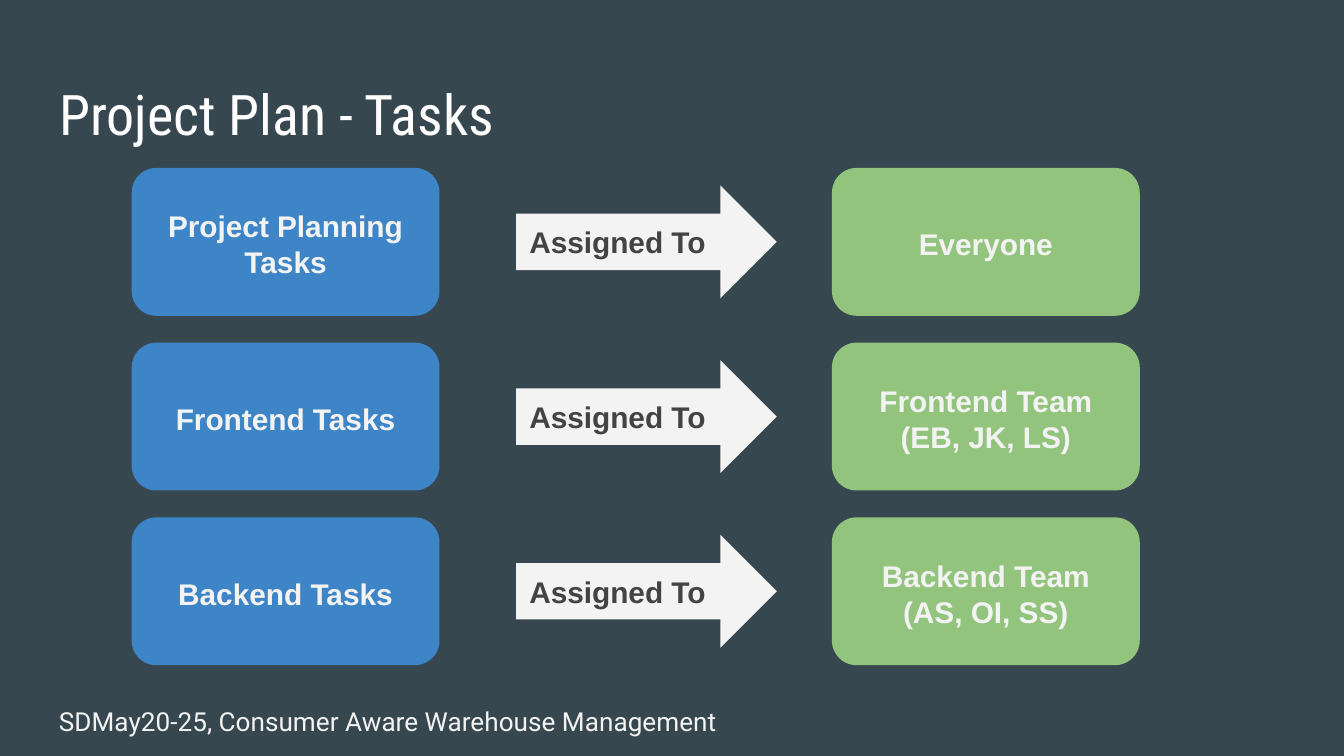
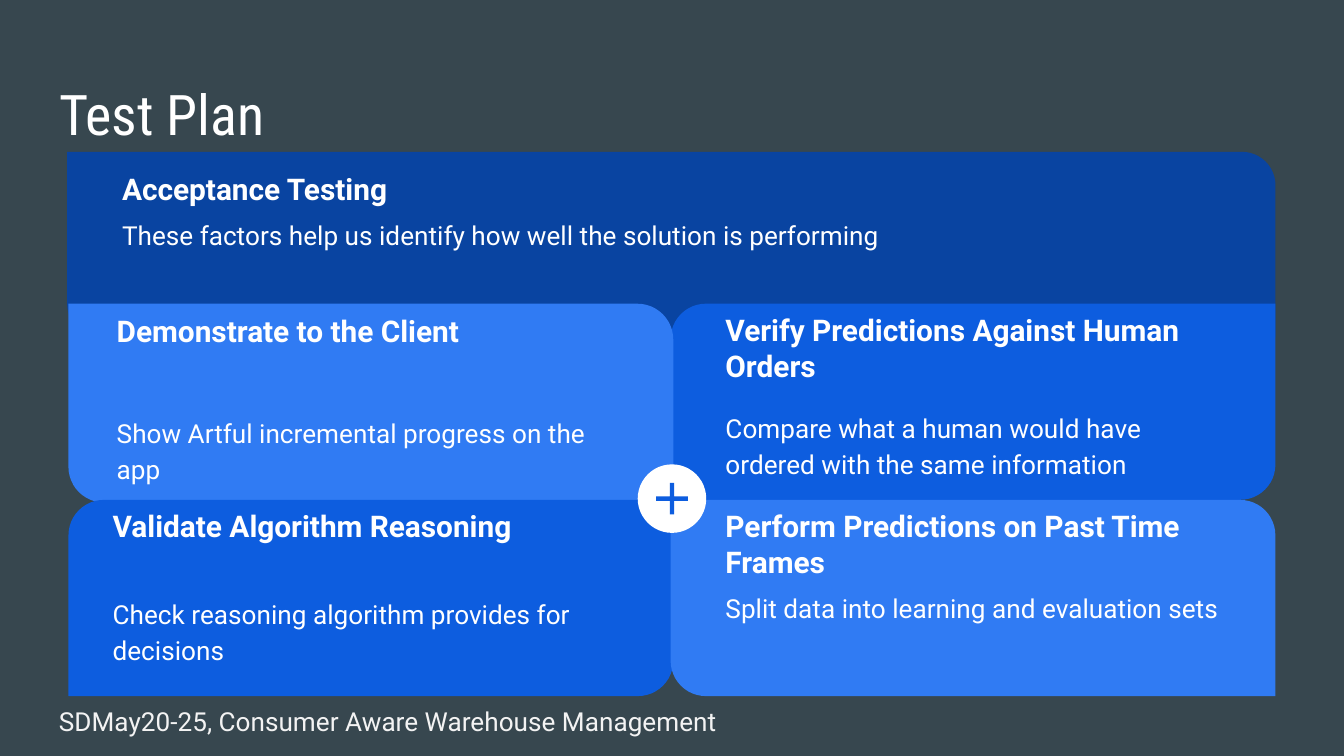
"""Build the project plan and test plan slides."""
from pptx import Presentation
from pptx.dml.color import RGBColor
from pptx.enum.shapes import MSO_SHAPE
from pptx.enum.text import MSO_ANCHOR, MSO_AUTO_SIZE, PP_ALIGN
from pptx.util import Inches, Pt

ARROW, ROUNDED = MSO_SHAPE.RIGHT_ARROW, MSO_SHAPE.ROUNDED_RECTANGLE
DIAGONAL = MSO_SHAPE.ROUND_2_DIAG_RECTANGLE
CIRCLE, PLUS = MSO_SHAPE.OVAL, MSO_SHAPE.MATH_PLUS
LEFT, CENTER = PP_ALIGN.LEFT, PP_ALIGN.CENTER
TOP, MIDDLE = MSO_ANCHOR.TOP, MSO_ANCHOR.MIDDLE
NO_FIT = MSO_AUTO_SIZE.NONE

SLIDE_WIDTH = Inches(10)
SLIDE_HEIGHT = SLIDE_WIDTH * 9 // 16

SLATE, WHITE, PALE, CHARCOAL = "37474F", "FFFFFF", "F3F3F3", "434343"
TASK_BLUE, TEAM_GREEN = "3D85C6", "93C47D"
NAVY, BLUE, SKY = "0944A1", "0D5DDF", "307BF3"

STYLES = {
    "title": (WHITE, {"name": "Roboto Condensed", "size": Pt(30), "bold": False}),
    "footer": (PALE, {"name": "Roboto", "size": Pt(14), "bold": False}),
    "box": (PALE, {"name": "Arial", "size": Pt(16), "bold": True}),
    "arrow": (CHARCOAL, {"name": "Arial", "size": Pt(16), "bold": True}),
    "heading": (WHITE, {"name": "Roboto", "size": Pt(16), "bold": True}),
    "detail": (WHITE, {"name": "Roboto", "size": Pt(14), "bold": False}),
}

FOOTER = "SDMay20-25, Consumer Aware Warehouse Management"
ASSIGNMENTS = [
    (["Project Planning Tasks"], ["Everyone"]),
    (["Frontend Tasks"], ["Frontend Team", "(EB, JK, LS)"]),
    (["Backend Tasks"], ["Backend Team", "(AS, OI, SS)"]),
]
ROW_TOP, ROW_PITCH = 1.25, 1.3
BOX_WIDTH, BOX_HEIGHT = 2.29, 1.1
TASK_LEFT, ARROW_LEFT, TEAM_LEFT = 0.98, 3.84, 6.19

FALLING, RISING = (0.18, 0), (0, 0.18)
# fill, rounded corners, card place, heading, its place, detail, its place
CARDS = [
    (NAVY, RISING, (0.5, 1.13, 8.99, 1.38),
     "Acceptance Testing", (0.81, 1.17, 7.3, 0.47),
     "These factors help us identify how well the solution is performing",
     (0.81, 1.5, 8.24, 0.72)),
    (BLUE, FALLING, (4.99, 2.26, 4.5, 1.46),
     "Verify Predictions Against Human Orders", (5.3, 2.22, 3.96, 0.43),
     "Compare what a human would have ordered with the same information",
     (5.3, 2.93, 3.96, 0.48)),
    (SKY, RISING, (0.51, 2.26, 4.5, 1.48),
     "Demonstrate to the Client", (0.77, 2.23, 3.95, 0.43),
     "Show Artful incremental progress on the app",
     (0.77, 2.97, 3.95, 0.48)),
    (BLUE, FALLING, (0.51, 3.72, 4.5, 1.46),
     "Validate Algorithm Reasoning", (0.74, 3.68, 4.03, 0.43),
     "Check reasoning algorithm provides for decisions",
     (0.74, 4.32, 4.03, 0.63)),
    (SKY, RISING, (4.99, 3.72, 4.5, 1.46),
     "Perform Predictions on Past Time Frames", (5.3, 3.68, 4.03, 0.43),
     "Split data into learning and evaluation sets",
     (5.3, 4.27, 4.03, 0.76)),
]
BADGE_CENTER = (5, 3.71)
BADGE_PARTS = [(CIRCLE, 0.51, WHITE, ()), (PLUS, 0.32, BLUE, (0.1,))]


def paint(fill, color):
    """Apply a hex colour to a fill."""
    fill.solid()
    fill.fore_color.rgb = RGBColor.from_string(color)


def write(frame, lines, style, align=LEFT, anchor=TOP, spacing=1, top=0.1):
    """Fill a text frame with styled paragraphs."""
    layout = {"word_wrap": True, "auto_size": NO_FIT, "vertical_anchor": anchor,
              "margin_left": Inches(0.1), "margin_right": Inches(0.1),
              "margin_top": Inches(top), "margin_bottom": Inches(0.1)}
    for key, value in layout.items():
        setattr(frame, key, value)
    frame.text = "\n".join(lines)
    color, font_format = STYLES[style]
    for paragraph in frame.paragraphs:
        paragraph.alignment = align
        paragraph.line_spacing = spacing
        for run in paragraph.runs:
            for key, value in font_format.items():
                setattr(run.font, key, value)
            paint(run.font.fill, color)


def add_block(shapes, kind, place, color, adjustments=()):
    """Add a flat filled shape."""
    block = shapes.add_shape(kind, *map(Inches, place))
    block.shadow.inherit = False
    block.line.fill.background()
    paint(block.fill, color)
    for index, value in enumerate(adjustments):
        block.adjustments[index] = value
    return block


def add_label(shapes, place, text, style, spacing=1):
    """Add a text box with one styled paragraph."""
    label = shapes.add_textbox(*map(Inches, place))
    write(label.text_frame, [text], style, spacing=spacing)


def add_slide(prs, heading):
    """Add a slide with the shared title and footer."""
    slide = prs.slides.add_slide(prs.slide_layouts[5])
    title = slide.shapes.title
    place = {"left": 0.34, "top": 0.49, "width": 9.32, "height": 0.63}
    for key, value in place.items():
        setattr(title, key, Inches(value))
    write(title.text_frame, [heading], "title")
    add_label(slide.shapes, (0.34, 5.15, 9.32, 0.33), FOOTER, "footer")
    return slide.shapes


def build_tasks(prs):
    """Build the rows that assign tasks to teams."""
    shapes = add_slide(prs, "Project Plan - Tasks")
    for row, (task, team) in enumerate(ASSIGNMENTS):
        top = ROW_TOP + row * ROW_PITCH
        for left, color, lines in ((TASK_LEFT, TASK_BLUE, task),
                                   (TEAM_LEFT, TEAM_GREEN, team)):
            box = add_block(shapes, ROUNDED, (left, top, BOX_WIDTH, BOX_HEIGHT), color)
            write(box.text_frame, lines, "box", CENTER, MIDDLE, top=0.13)
        arrow = add_block(shapes, ARROW, (ARROW_LEFT, top + 0.13, 1.94, 0.84), PALE)
        write(arrow.text_frame, ["Assigned To"], "arrow", LEFT, MIDDLE)


def build_tests(prs):
    """Build the test cards and the plus badge."""
    shapes = add_slide(prs, "Test Plan")
    for color, corners, place, heading, heading_at, detail, detail_at in CARDS:
        card = shapes.add_group_shape().shapes
        add_block(card, DIAGONAL, place, color, corners)
        add_label(card, heading_at, heading, "heading")
        add_label(card, detail_at, detail, "detail", 1.15)
    badge = shapes.add_group_shape().shapes
    center_x, center_y = BADGE_CENTER
    for kind, size, color, adjustments in BADGE_PARTS:
        place = (center_x - size / 2, center_y - size / 2, size, size)
        add_block(badge, kind, place, color, adjustments)


def main():
    """Build and save the presentation."""
    prs = Presentation()
    prs.slide_width, prs.slide_height = SLIDE_WIDTH, SLIDE_HEIGHT
    paint(prs.slide_master.background.fill, SLATE)
    build_tasks(prs)
    build_tests(prs)
    prs.save("out.pptx")


if __name__ == "__main__":
    main()
